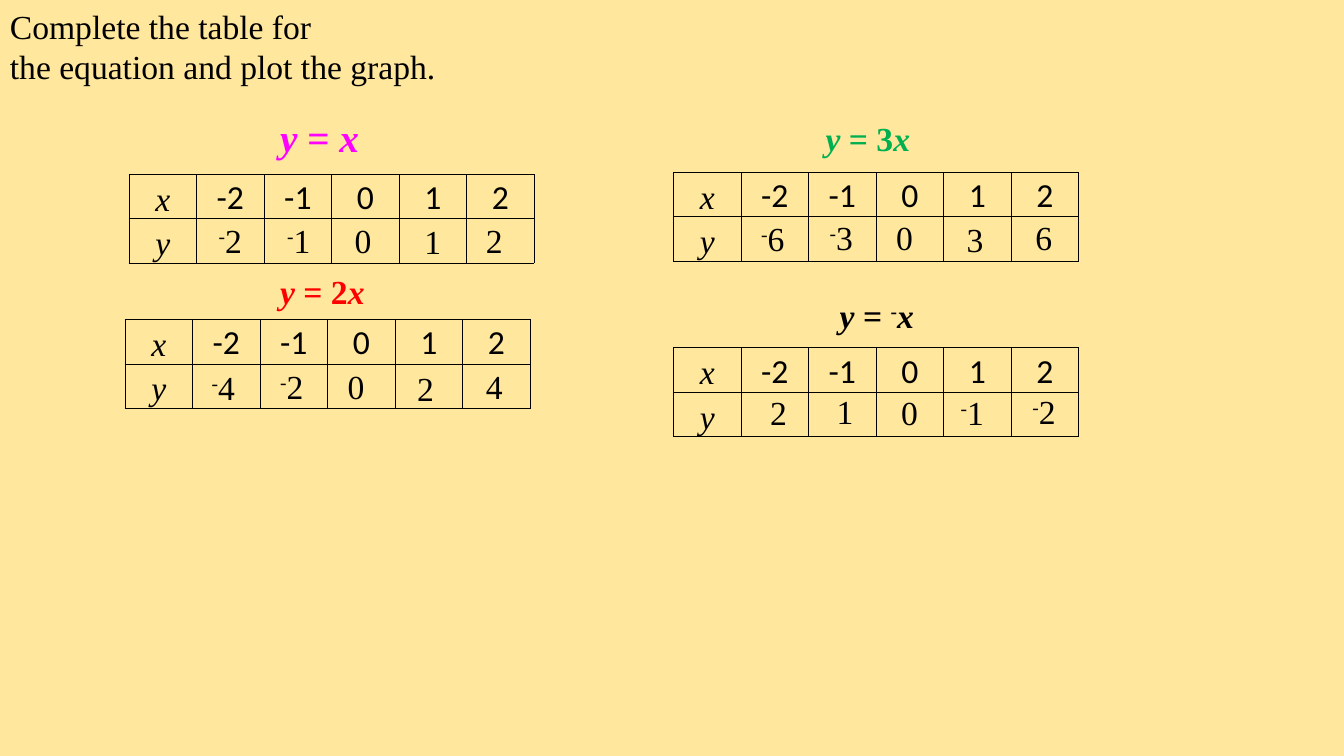
from dataclasses import dataclass
from itertools import groupby

from lxml.etree import SubElement
from pptx import Presentation
from pptx.dml.color import RGBColor
from pptx.enum.text import MSO_ANCHOR, MSO_AUTO_SIZE, PP_ALIGN
from pptx.oxml.ns import qn
from pptx.slide import Slide
from pptx.table import _Cell as Cell
from pptx.text.text import TextFrame, _Paragraph as Paragraph
from pptx.util import Inches, Pt


@dataclass(frozen=True)
class Theme:
    background: str = "FFC000"
    background_alpha: int = 38
    ink: str = "000000"
    magenta: str = "FF00FF"
    red: str = "FF0000"
    green: str = "00B050"
    serif: str = "Times New Roman"
    sans: str = "Calibri"
    size: int = 24
    large: int = 28
    border: float = 0.5


@dataclass(frozen=True)
class Box:
    text: str
    left: float
    top: float
    width: float
    height: float = 0.51


@dataclass(frozen=True)
class Answer:
    text: str
    left: float
    top: float


@dataclass(frozen=True)
class Exercise:
    heading: Box
    color: str
    left: float
    top: float
    answers: tuple[Answer, ...]
    size: int = Theme.size


THEME = Theme()
X_VALUES = ("-2", "-1", "0", "1", "2")
COLUMN_WIDTH = 0.67
ROW_HEIGHT = 0.44
INSTRUCTION = Box("Complete the table for\nthe equation and plot the graph.", 0, 0.01, 4.54, 0.91)

EXERCISES = (
    Exercise(Box("y = x", 2.68, 1.08, 0.99, 0.57), THEME.magenta, 1.28, 1.73,
             (Answer("-2", 2.07, 2.13), Answer("-1", 2.75, 2.13), Answer("0", 3.42, 2.13),
              Answer("1", 4.11, 2.14), Answer("2", 4.72, 2.13)), THEME.large),
    Exercise(Box("y = 2x", 2.68, 2.64, 1.05), THEME.red, 1.24, 3.17,
             (Answer("-4", 2, 3.59), Answer("-2", 2.68, 3.58), Answer("0", 3.35, 3.58),
              Answer("2", 4.04, 3.6), Answer("4", 4.72, 3.58))),
    Exercise(Box("y = 3x", 8.09, 1.12, 1.05), THEME.green, 6.68, 1.71,
             (Answer("-6", 7.45, 2.11), Answer("-3", 8.13, 2.1), Answer("0", 8.79, 2.1),
              Answer("3", 9.49, 2.12), Answer("6", 10.17, 2.1))),
    Exercise(Box("y = -x", 8.23, 2.88, 0.95), THEME.ink, 6.68, 3.45,
             (Answer("2", 7.54, 3.84), Answer("1", 8.2, 3.83), Answer("0", 8.84, 3.84),
              Answer("-1", 9.43, 3.84), Answer("-2", 10.14, 3.83))),
)


def add_run(p: Paragraph, text: str, color: str = THEME.ink, **formats) -> None:
    r = p.add_run()
    r.text = text
    r.font.color.rgb = RGBColor.from_string(color)
    for name, value in ({"name": THEME.serif, "size": Pt(THEME.size)} | formats).items():
        setattr(r.font, name, value)


def math_kind(char: str) -> str:
    return {"x": "variable", "y": "variable", "-": "minus"}.get(char, "plain")


def add_math(p: Paragraph, text: str, **formats) -> None:
    for kind, chars in groupby(text, math_kind):
        add_run(p, "".join(chars), italic=kind == "variable", **formats)
        if kind == "minus":
            p.runs[-1]._r.get_or_add_rPr().set("baseline", "30000")


def add_box(s: Slide, box: Box) -> TextFrame:
    sp = s.shapes.add_textbox(*map(Inches, (box.left, box.top, box.width, box.height)))
    tf = sp.text_frame
    tf.word_wrap = False
    tf.auto_size = MSO_AUTO_SIZE.SHAPE_TO_FIT_TEXT
    return tf


def style_cell(cell: Cell) -> None:
    formats = {
        "margin_left": Inches(0.01), "margin_right": Inches(0.01),
        "margin_top": Inches(0.01), "margin_bottom": 0,
        "vertical_anchor": MSO_ANCHOR.BOTTOM,
    }
    for name, value in formats.items():
        setattr(cell, name, value)
    tc_pr = cell._tc.get_or_add_tcPr()
    for side in ("a:lnL", "a:lnR", "a:lnT", "a:lnB"):
        line = SubElement(tc_pr, qn(side), w=str(Pt(THEME.border)))
        SubElement(SubElement(line, qn("a:solidFill")), qn("a:srgbClr"), val=THEME.ink)
    cell.fill.background()


def add_value_table(s: Slide, left: float, top: float) -> None:
    columns = len(X_VALUES) + 1
    table = s.shapes.add_table(
        2, columns, Inches(left), Inches(top),
        Inches(COLUMN_WIDTH * columns), Inches(ROW_HEIGHT * 2)).table
    table.first_row = table.horz_banding = False
    for column in table.columns:
        column.width = Inches(COLUMN_WIDTH)
    for row in table.rows:
        row.height = Inches(ROW_HEIGHT)
    for cell in table.iter_cells():
        style_cell(cell)
    labels = {(0, 0): "x", (1, 0): "y"}
    labels |= {(0, i): value for i, value in enumerate(X_VALUES, 1)}
    for (row, column), text in labels.items():
        p = table.cell(row, column).text_frame.paragraphs[0]
        p.alignment = PP_ALIGN.CENTER
        add_run(p, text, italic=column == 0, name=THEME.sans if column else THEME.serif)


def add_exercise(s: Slide, exercise: Exercise) -> None:
    add_value_table(s, exercise.left, exercise.top)
    add_math(add_box(s, exercise.heading).paragraphs[0], exercise.heading.text,
             color=exercise.color, size=Pt(exercise.size), bold=True)
    for answer in exercise.answers:
        width = 0.45 if answer.text.startswith("-") else 0.37
        tf = add_box(s, Box(answer.text, answer.left, answer.top, width))
        add_math(tf.paragraphs[0], answer.text)


def set_background(s: Slide) -> None:
    fill = s.background.fill
    fill.solid()
    fill.fore_color.rgb = RGBColor.from_string(THEME.background)
    color = s.background._cSld.find(".//" + qn("a:srgbClr"))
    SubElement(color, qn("a:alpha"), val=str(THEME.background_alpha * 1000))


def main() -> None:
    prs = Presentation()
    prs.slide_width, prs.slide_height = Inches(13.33), Inches(7.5)
    s = prs.slides.add_slide(prs.slide_layouts[6])
    set_background(s)
    tf = add_box(s, INSTRUCTION)
    for i, text in enumerate(INSTRUCTION.text.split("\n")):
        add_run(tf.add_paragraph() if i else tf.paragraphs[0], text)
    for exercise in EXERCISES:
        add_exercise(s, exercise)
    prs.save("out.pptx")


if __name__ == "__main__":
    main()
